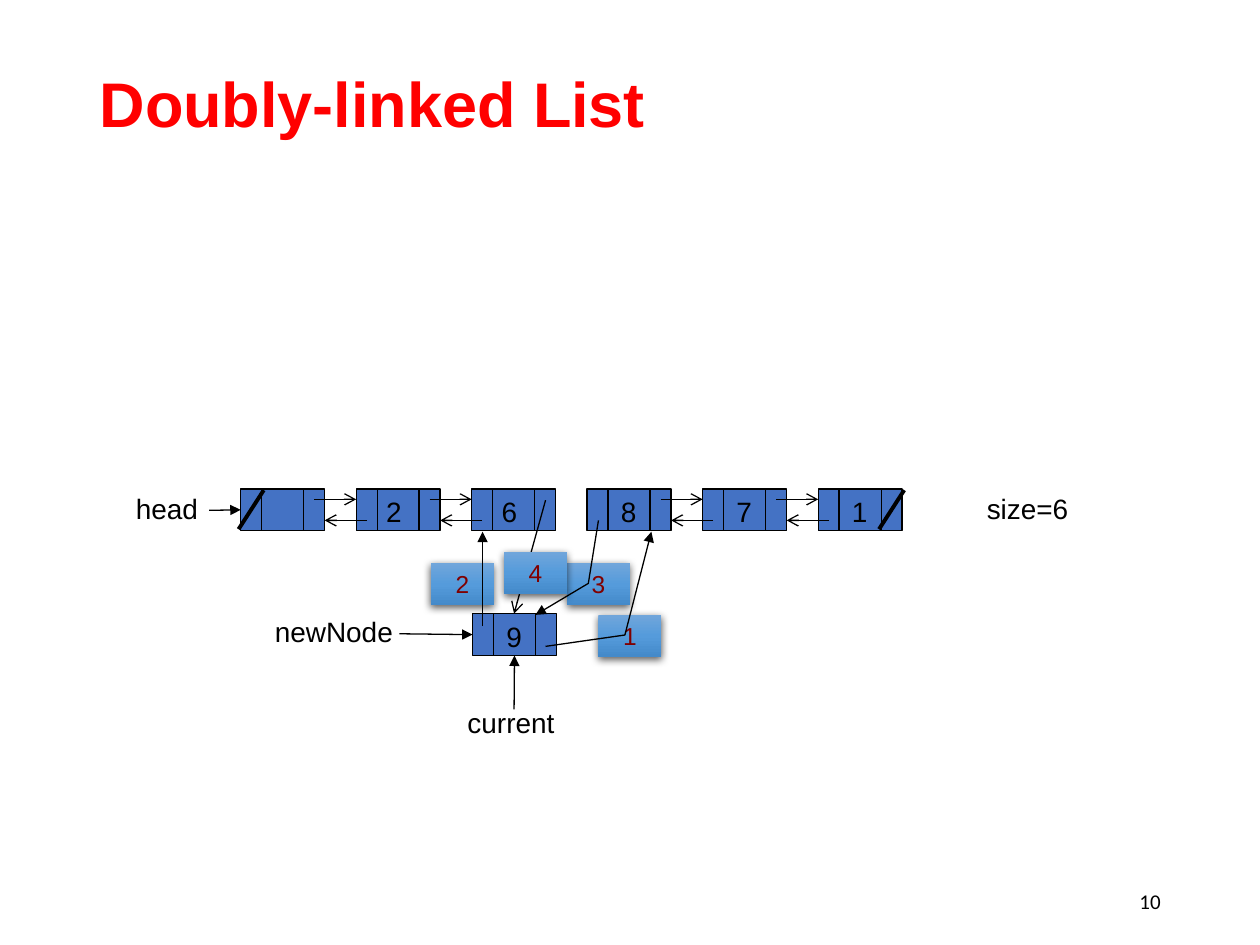
from lxml import etree
from pptx import Presentation
from pptx import util as u
from pptx.dml.color import RGBColor
from pptx.enum import shapes, text
from pptx.oxml import ns, parse_xml

CELL = 1 / 6  # a node is four cells wide and two high
NODE_WIDTH, NODE_HEIGHT = 4 * CELL, 2 * CELL
PITCH = 5.5 * CELL
LIST_LEFT, LIST_TOP = 1.91, 3.88
NEW_LEFT, NEW_TOP = 3.75, 4.87
VALUES = [("", 0), ("2", 0.14), ("6", 0.14), ("8", 0.17), ("7", 0.17), ("1", 0.17)]
BROKEN_LINK = 2

BLACK = "000000"
NODE_BLUE = "4472C4"
BODY = {"name": "Arial", "size": u.Pt(16)}
STEP = {"name": "Arial", "size": u.Pt(14)}
TITLE = {"name": "Arial", "size": u.Pt(36), "bold": True}
NUMBER = {"name": "Calibri", "size": u.Pt(12)}

STEP_GRADIENT = f"""<a:gradFill {ns.nsdecls('a')} rotWithShape="1"><a:gsLst>
<a:gs pos="0"><a:srgbClr val="71A6DB"/></a:gs>
<a:gs pos="50000"><a:srgbClr val="559BDB"/></a:gs>
<a:gs pos="100000"><a:srgbClr val="448ACA"/></a:gs>
</a:gsLst><a:lin ang="5400000" scaled="0"/></a:gradFill>"""
STEP_SHADOW = f"""<a:effectLst {ns.nsdecls('a')}>
<a:outerShdw blurRad="57150" dist="19050" dir="5400000" algn="ctr" rotWithShape="0">
<a:srgbClr val="000000"><a:alpha val="63000"/></a:srgbClr></a:outerShdw></a:effectLst>"""


def color(value):
    return RGBColor.from_string(value)


def inches(*lengths):
    return [u.Inches(length) for length in lengths]


def write(shape, words, font, ink=BLACK, align=text.PP_ALIGN.LEFT):
    paragraph = shape.text_frame.paragraphs[0]
    paragraph.alignment = align
    run = paragraph.add_run()
    run.text = words
    for name, value in font.items():
        setattr(run.font, name, value)
    run.font.color.rgb = color(ink)
    return paragraph


def add_text(slide, words, box, font=BODY, align=text.PP_ALIGN.LEFT, wrap=True):
    shape = slide.shapes.add_textbox(*inches(*box))
    shape.text_frame.word_wrap = wrap
    write(shape, words, font, align=align)
    return shape


def add_label(slide, words, left, top, width):
    add_text(slide, words, (left, top, width, 0.37), align=text.PP_ALIGN.CENTER, wrap=False)


def style_line(shape, width=0.75, arrow=None):
    shape.line.color.rgb = color(BLACK)
    shape.line.width = u.Pt(width)
    if arrow:
        outline = shape.element.spPr.find(ns.qn("a:ln"))
        etree.SubElement(outline, ns.qn("a:tailEnd"), type=arrow)


def add_line(slide, start, end, width=0.75, arrow=None):
    line = slide.shapes.add_connector(shapes.MSO_CONNECTOR.STRAIGHT, *inches(*start, *end))
    style_line(line, width, arrow)
    etree.SubElement(line.element.spPr, ns.qn("a:effectLst"))
    return line


def add_bent_arrow(slide, *points):
    start, *rest = [inches(*point) for point in points]
    builder = slide.shapes.build_freeform(*start)
    builder.add_line_segments(rest, close=False)
    arrow = builder.convert_to_shape()
    arrow.shadow.inherit = False
    arrow.fill.background()
    style_line(arrow, arrow="triangle")


def add_node(slide, left, top, value, offset):
    """Draw a node with previous, value and next cells."""
    node = slide.shapes.add_shape(
        shapes.MSO_SHAPE.RECTANGLE, *inches(left, top, NODE_WIDTH, NODE_HEIGHT))
    node.shadow.inherit = False
    node.fill.solid()
    node.fill.fore_color.rgb = color(NODE_BLUE)
    style_line(node)
    for x in (left + CELL, left + 3 * CELL):
        add_line(slide, (x, top), (x, top + NODE_HEIGHT))
    if value:
        add_text(slide, value, (left + offset, top, 0.33, 0.37))
    return node


def add_null_mark(slide, center):
    add_line(slide, (center + 0.1, LIST_TOP + 0.01), (center - 0.1, LIST_TOP + 0.32), 2.25)


def add_links(slide, left):
    """Join a node to its successor, forwards and backwards."""
    next_y, previous_y = LIST_TOP + 0.5 * CELL, LIST_TOP + 1.5 * CELL
    successor = left + PITCH
    add_line(slide, (left + 3.5 * CELL, next_y), (successor, next_y), arrow="arrow")
    add_line(slide, (successor + 0.5 * CELL, previous_y), (left + NODE_WIDTH, previous_y),
             arrow="arrow")


def add_step(slide, number, left, top):
    step = slide.shapes.add_shape(
        shapes.MSO_SHAPE.RECTANGLE, *inches(left, top, 0.5, NODE_HEIGHT))
    step.line.fill.background()
    outline = step.element.spPr.find(ns.qn("a:ln"))
    outline.addprevious(parse_xml(STEP_GRADIENT))
    outline.addnext(parse_xml(STEP_SHADOW))
    step.text_frame.vertical_anchor = text.MSO_ANCHOR.TOP
    write(step, number, STEP, "800000", text.PP_ALIGN.CENTER)


def add_title(slide):
    title = slide.shapes.title
    title.left, title.top, title.width, title.height = inches(0.69, 0.4, 8.62, 0.9)
    title.text_frame.vertical_anchor = text.MSO_ANCHOR.MIDDLE
    write(title, "Doubly-linked List", TITLE, "FF0000").line_spacing = 0.9


def add_list(slide):
    """Draw the list with its broken link and return the head node."""
    lefts = [LIST_LEFT + index * PITCH for index in range(len(VALUES))]
    nodes = [add_node(slide, left, LIST_TOP, *value) for left, value in zip(lefts, VALUES)]
    for index, left in enumerate(lefts[:-1]):
        if index != BROKEN_LINK:
            add_links(slide, left)
    add_null_mark(slide, lefts[0] + 0.5 * CELL)
    add_null_mark(slide, lefts[-1] + 3.5 * CELL)
    return nodes[0]


def add_pointers(slide, head, new_node):
    add_label(slide, "size=6", 7.73, 3.85, 0.85)
    for words, box, start, node, side in (
        ("head", (0.98, 3.85, 0.69), (1.66, 4.05), head, 1),
        ("newNode", (2.08, 4.83, 1.14), (3.17, 5.03), new_node, 1),
        ("current", (3.61, 5.55, 0.89), (4.08, 5.63), new_node, 2),
    ):
        add_label(slide, words, *box)
        add_line(slide, start, start, arrow="triangle").end_connect(node, side)


def add_insertion(slide):
    """Draw the four numbered pointer changes that insert the new node."""
    add_line(slide, (4.33, 3.97), (4.08, NEW_TOP), arrow="arrow")
    for number, left, top in (
        ("1", 4.75, 4.88), ("2", 3.42, 4.47), ("3", 4.5, 4.47), ("4", 4, 4.38),
    ):
        add_step(slide, number, left, top)
    add_line(slide, (3.83, 4.97), (3.83, 4.22), arrow="triangle")
    add_bent_arrow(slide, (4.33, 5.13), (4.96, 5.04), (5.17, 4.22))
    add_bent_arrow(slide, (4.75, 4.13), (4.67, 4.63), (4.25, 4.88))


def main():
    presentation = Presentation()
    presentation.slide_width, presentation.slide_height = inches(10, 7.5)
    slide = presentation.slides.add_slide(presentation.slide_layouts[5])
    add_title(slide)
    number = add_text(slide, "10", (7.06, 6.95, 2.25, 0.4), NUMBER, text.PP_ALIGN.RIGHT)
    number.text_frame.vertical_anchor = text.MSO_ANCHOR.MIDDLE
    head = add_list(slide)
    new_node = add_node(slide, NEW_LEFT, NEW_TOP, "9", 0.17)
    add_pointers(slide, head, new_node)
    add_insertion(slide)
    presentation.save("out.pptx")


if __name__ == "__main__":
    main()
